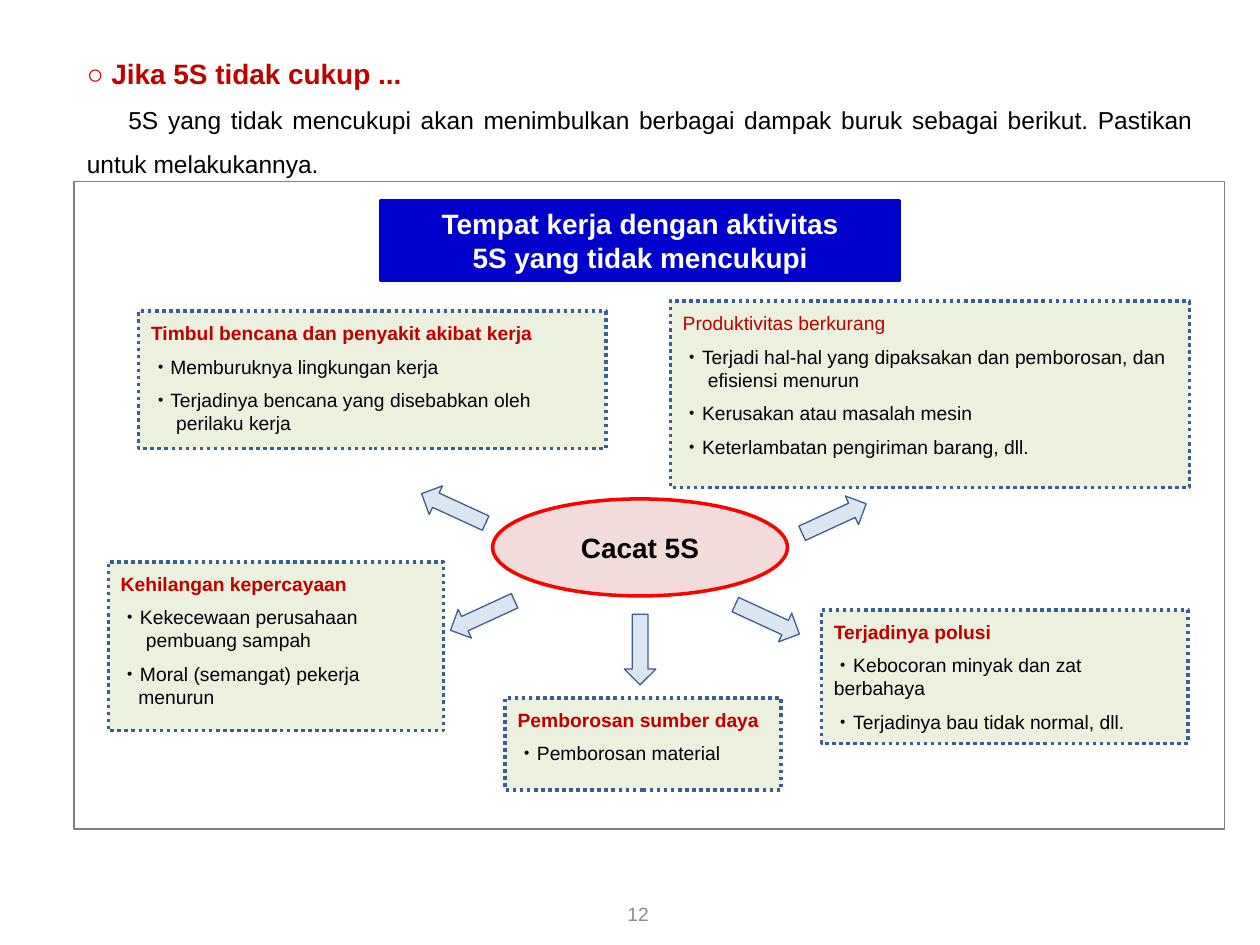
from pptx import Presentation
from pptx.dml.color import RGBColor
from pptx.enum.dml import MSO_LINE as Dash
from pptx.enum.shapes import MSO_SHAPE as Form
from pptx.enum.text import MSO_ANCHOR as Anchor, PP_ALIGN as Align
from pptx.util import Inches, Pt

BLACK = RGBColor(0x00, 0x00, 0x00)
WHITE = RGBColor(0xFF, 0xFF, 0xFF)
GRAY = RGBColor(0x80, 0x80, 0x80)
PALE = RGBColor(0x8C, 0x8C, 0x8C)
BLUE = RGBColor(0x00, 0x00, 0xCC)
STEEL = RGBColor(0x3A, 0x5F, 0x8C)
SKY = RGBColor(0xDC, 0xE6, 0xF2)
GREEN = RGBColor(0xEB, 0xF1, 0xDE)
PINK = RGBColor(0xF2, 0xDC, 0xDB)
RED = RGBColor(0xFF, 0x00, 0x00)
CRIMSON = RGBColor(0xC0, 0x00, 0x00)

COLS, ROWS = 100, 75
CELL = Inches(0.1)

# place, title, title is bold, bullets with their hanging indent in inches
EFFECTS = [
    ((11, 24.7, 37.1, 10.9), "Timbul bencana dan penyakit akibat kerja", True, [
        ("Memburuknya lingkungan kerja", 0),
        ("Terjadinya bencana yang disebabkan oleh perilaku kerja", 0.2)]),
    ((53.2, 23.9, 41.2, 14.8), "Produktivitas berkurang", False, [
        ("Terjadi hal-hal yang dipaksakan dan pemborosan, dan efisiensi menurun", 0.2),
        ("Kerusakan atau masalah mesin", 0.2),
        ("Keterlambatan pengiriman barang, dll.", 0.2)]),
    ((8.6, 44.6, 26.6, 13.4), "Kehilangan kepercayaan", True, [
        ("Kekecewaan perusahaan pembuang sampah", 0.2),
        ("Moral (semangat) pekerja menurun", 0.14)]),
    ((40.1, 55.4, 21.9, 7.3), "Pemborosan sumber daya", True, [
        ("Pemborosan material", 0)]),
    ((65.2, 48.4, 29.1, 10.6), "Terjadinya polusi", True, [
        ("Kebocoran minyak dan zat berbahaya", 0),
        ("Terjadinya bau tidak normal, dll.", 0.2)]),
]

# left, top and clockwise turn of a left arrow
TILT = 24.7
ARROWS = [
    (33.2, 39.1, TILT),
    (35.5, 47.6, -TILT),
    (63.4, 39.9, 180 - TILT),
    (58.1, 47.9, 180 + TILT),
    (48, 50.3, 270),
]


class Deck:
    """Holds the style and the current slide; places are in grid cells."""

    font = "Arial"
    body, mid, head = 11, 14, 16

    def __init__(self):
        self.prs = Presentation()
        self.prs.slide_width = COLS * CELL
        self.prs.slide_height = ROWS * CELL
        self.slide = self.prs.slides.add_slide(self.prs.slide_layouts[6])

    def place(self, cells):
        return [round(n * CELL) for n in cells]

    def shape(self, form, cells, fill, line, width):
        item = self.slide.shapes.add_shape(form, *self.place(cells))
        item.shadow.inherit = False
        if fill is None:
            item.fill.background()
        else:
            item.fill.solid()
            item.fill.fore_color.rgb = fill
        item.line.color.rgb = line
        item.line.width = Pt(width)
        return item

    def frame(self, item, anchor=Anchor.TOP):
        text = item.text_frame
        text.word_wrap = True
        text.vertical_anchor = anchor
        return text

    def run(self, para, words, size, color, bold=False):
        run = para.add_run()
        run.text = words
        run.font.name = self.font
        run.font.size = Pt(size)
        run.font.color.rgb = color
        run.font.bold = bold

    def label(self, item, lines, size, color, bold=True, anchor=Anchor.TOP):
        """Write centred lines into one paragraph of the item."""
        para = self.frame(item, anchor).paragraphs[0]
        para.alignment = Align.CENTER
        for i, line in enumerate(lines):
            if i:
                para.add_line_break()
            self.run(para, line, size, color, bold)

    def indent(self, para, left, first):
        props = para._p.get_or_add_pPr()
        props.set("marL", str(Inches(left)))
        props.set("indent", str(Inches(first)))

    def effect(self, cells, title, bold, points):
        box = self.shape(Form.RECTANGLE, cells, GREEN, STEEL, 2)
        box.line.dash_style = Dash.ROUND_DOT
        text = self.frame(box)
        text.margin_top = Inches(0.08)
        para = text.paragraphs[0]
        para.alignment = Align.LEFT
        self.run(para, title, self.body, CRIMSON, bold)
        for words, hang in points:
            para = text.add_paragraph()
            para.alignment = Align.LEFT
            para.space_before = Pt(6)
            self.indent(para, hang, -hang)
            self.run(para, "・" + words, self.body, BLACK)

    def arrow(self, left, top, turn):
        item = self.shape(Form.LEFT_ARROW, (left, top, 5.6, 2.5), SKY, STEEL, 0.75)
        item.rotation = turn

    def box(self, cells):
        return self.slide.shapes.add_textbox(*self.place(cells))

    def intro(self, cells, title, words):
        text = self.frame(self.box(cells))
        first, second = text.paragraphs[0], text.add_paragraph()
        for para in (first, second):
            para.alignment = Align.JUSTIFY
            para.line_spacing = 1.5
        self.run(first, title, self.head, CRIMSON, True)
        self.indent(second, 0, 0.33)
        self.run(second, words, self.mid, BLACK)


def main():
    deck = Deck()
    deck.shape(Form.RECTANGLE, (5.9, 14.4, 91.3, 51.4), None, GRAY, 1)
    banner = deck.shape(Form.RECTANGLE, (30.2, 15.9, 41.2, 6.4), BLUE, BLUE, 1.5)
    deck.label(banner, ["Tempat kerja dengan aktivitas", "5S yang tidak mencukupi"],
               deck.head, WHITE)
    core = deck.shape(Form.OVAL, (39.1, 39.6, 23.4, 7.7), PINK, RED, 2)
    deck.label(core, ["Cacat 5S"], deck.head, BLACK, anchor=Anchor.MIDDLE)
    for effect in EFFECTS:
        deck.effect(*effect)
    for arrow in ARROWS:
        deck.arrow(*arrow)
    deck.intro((5.9, 2.7, 89.8, 11.7), "○ Jika 5S tidak cukup ...",
               "5S yang tidak mencukupi akan menimbulkan berbagai dampak buruk "
               "sebagai berikut. Pastikan untuk melakukannya.")
    deck.label(deck.box((39, 70.5, 23.3, 4)), ["12"], deck.body, PALE, False, Anchor.MIDDLE)
    deck.prs.save("out.pptx")


if __name__ == "__main__":
    main()
